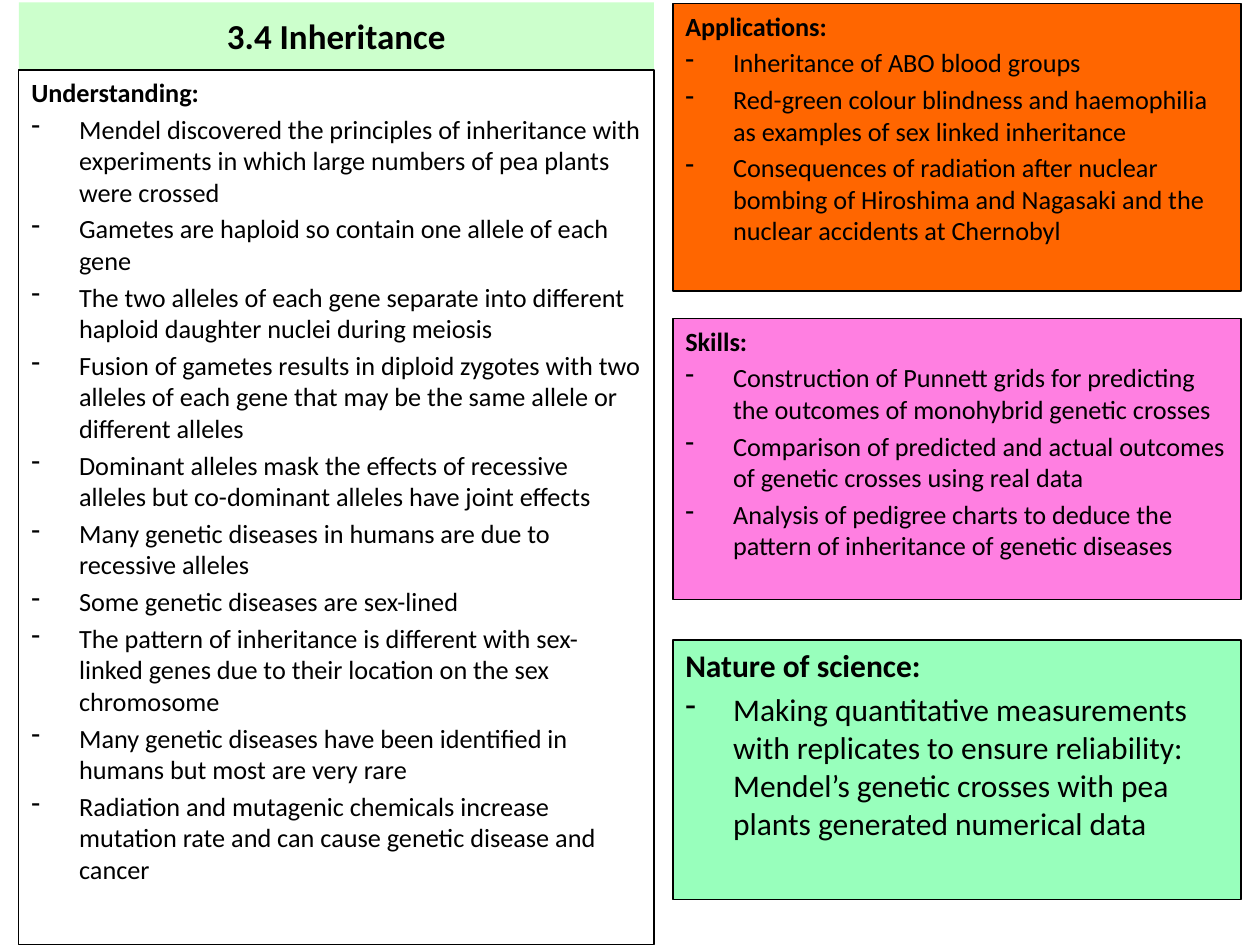
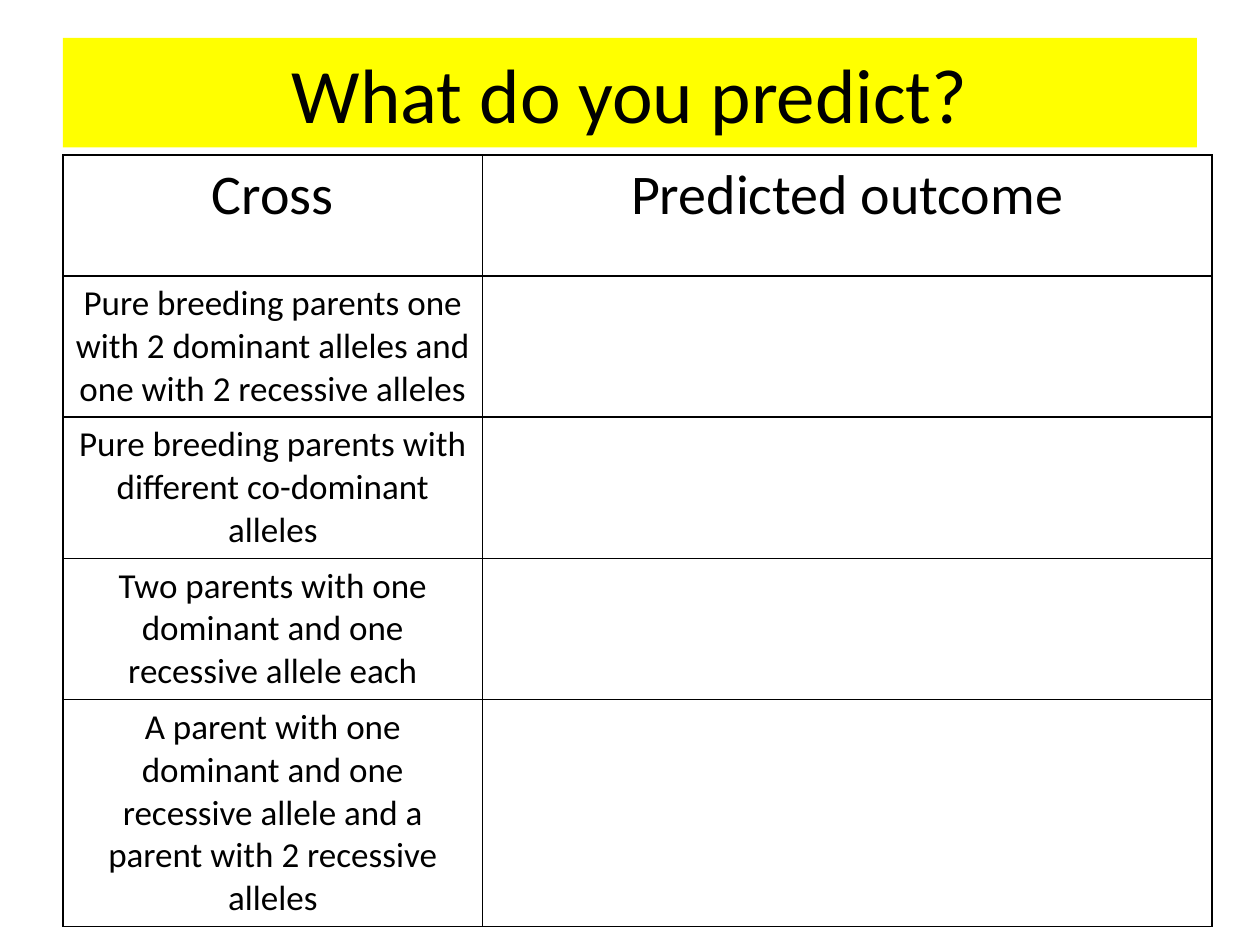
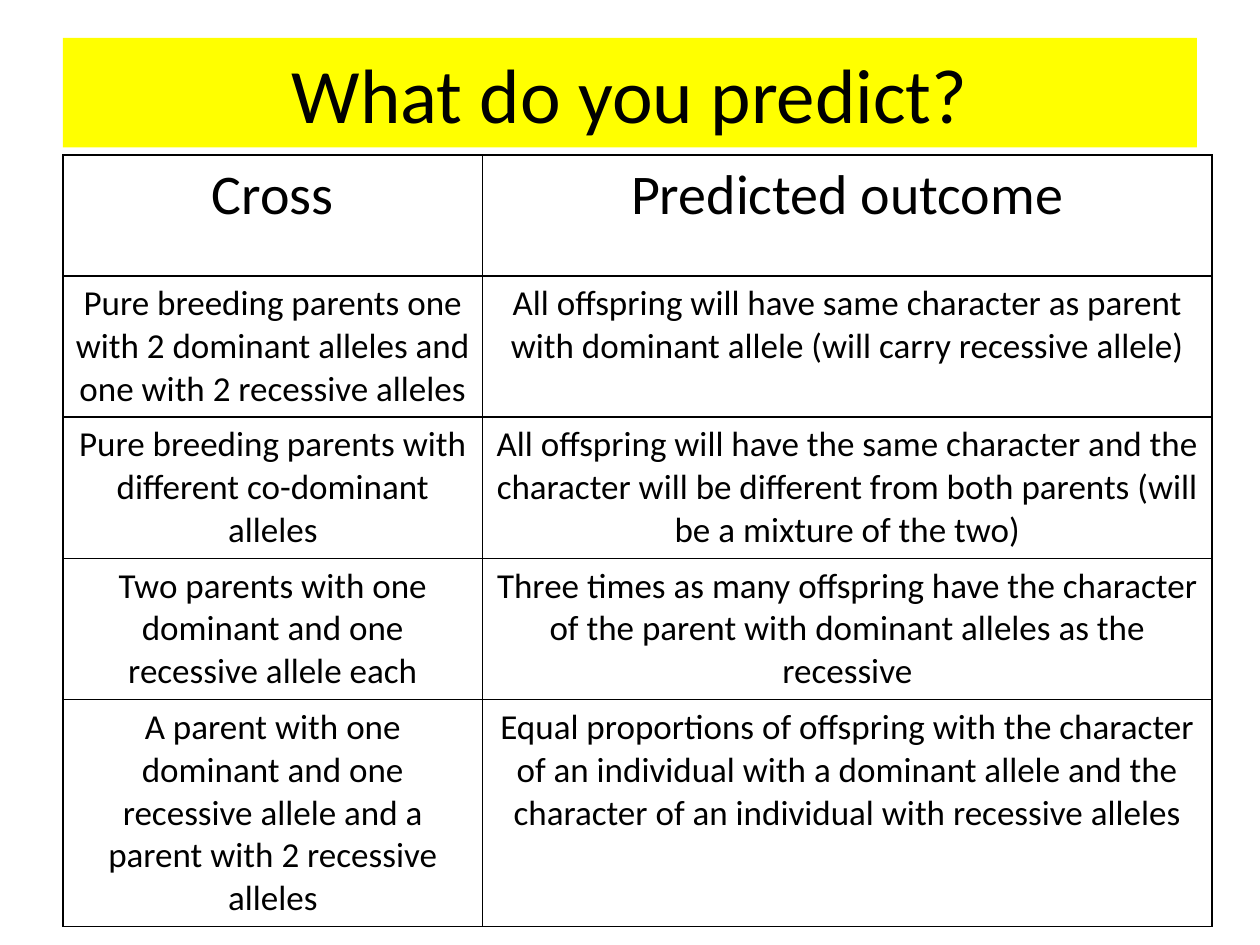
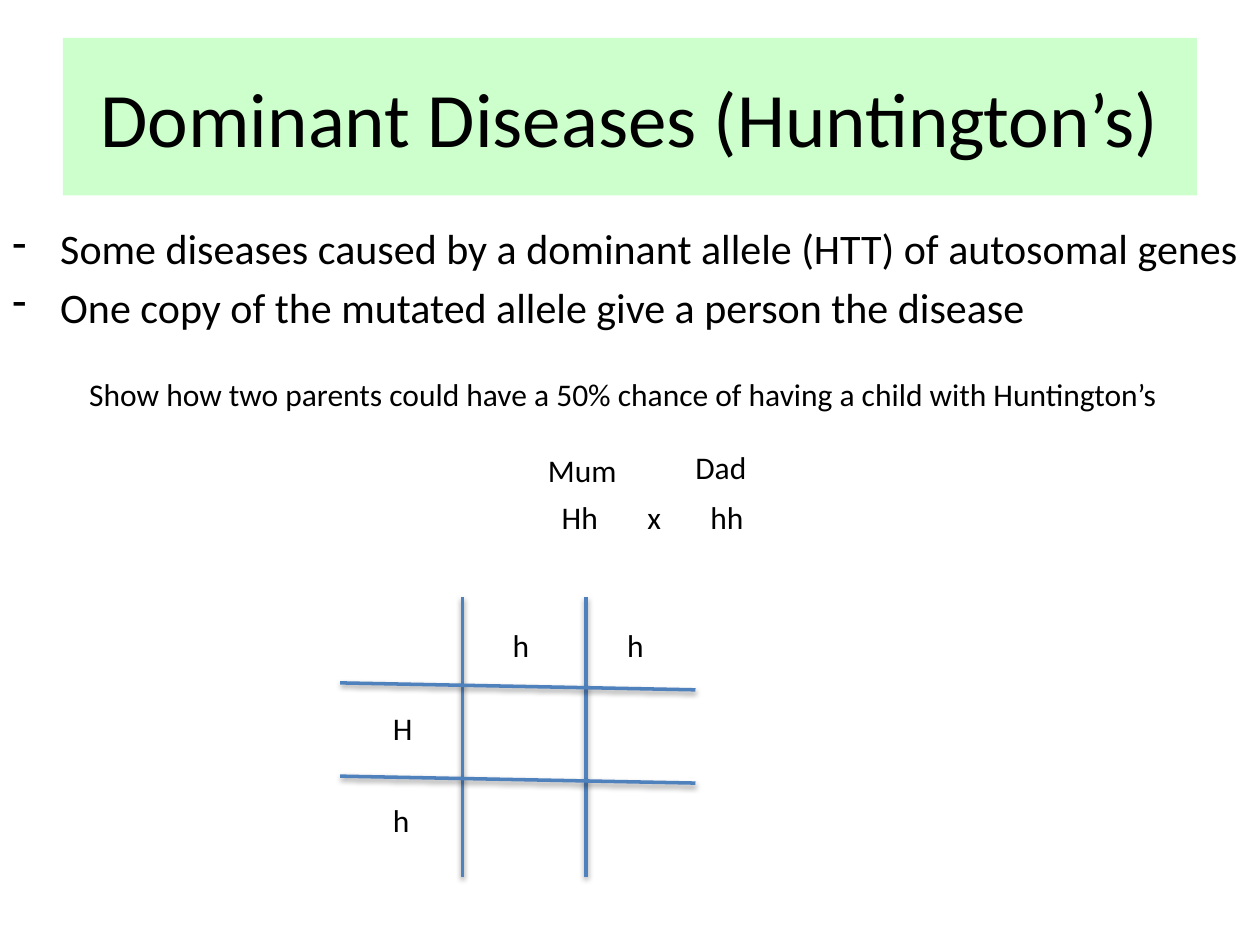
from lxml import etree
from pptx import Presentation
from pptx.dml.color import RGBColor
from pptx.enum.shapes import MSO_CONNECTOR, MSO_SHAPE
from pptx.enum.text import MSO_ANCHOR, PP_ALIGN
from pptx.oxml.ns import qn
from pptx.util import Inches, Pt

RECTANGLE = MSO_SHAPE.RECTANGLE
STRAIGHT = MSO_CONNECTOR.STRAIGHT
LEFT, CENTER = PP_ALIGN.LEFT, PP_ALIGN.CENTER
TOP, MIDDLE = MSO_ANCHOR.TOP, MSO_ANCHOR.MIDDLE

BLACK = RGBColor(0x00, 0x00, 0x00)
PALE_GREEN = RGBColor(0xCC, 0xFF, 0xCC)
YELLOW = RGBColor(0xFF, 0xFF, 0x00)
ORANGE = RGBColor(0xFF, 0x66, 0x00)
PINK = RGBColor(0xFF, 0x7F, 0xE1)
MINT = RGBColor(0x98, 0xFF, 0xBC)
BLUE = RGBColor(0x4F, 0x81, 0xBD)

FONT = "Calibri"
TITLE_SIZE = 44
HANGING_INDENT = Inches(0.38)

presentation = Presentation()
presentation.slide_width = Inches(10)
presentation.slide_height = Inches(7.5)
CELL = presentation.slide_width / 100
blank_layout = presentation.slide_layouts[6]


def write(frame, text, size=18, align=LEFT, bold_first=False, bullets=False,
          spacing=0, tabs=()):
    for index, line in enumerate(text.split("\n")):
        paragraph = frame.paragraphs[0] if index == 0 else frame.add_paragraph()
        heading = bold_first and index == 0
        paragraph.alignment = align
        paragraph.space_before = Pt(size * spacing)
        properties = paragraph._p.get_or_add_pPr()
        if bullets and not heading:
            properties.set("marL", str(HANGING_INDENT))
            properties.set("indent", str(-HANGING_INDENT))
            etree.SubElement(properties, qn("a:buChar"), char="-")
        if tabs:
            tab_list = etree.SubElement(properties, qn("a:tabLst"))
            for tab in tabs:
                etree.SubElement(tab_list, qn("a:tab"), pos=str(int(tab * CELL)), algn="l")
        run = paragraph.add_run()
        run.text = line
        run.font.name = FONT
        run.font.size = Pt(size)
        run.font.bold = heading
        run.font.color.rgb = BLACK


def add_box(slide, grid, text, fill=None, outlined=False, anchor=TOP, wrap=True, **text_format):
    shape = slide.shapes.add_shape(RECTANGLE, *[int(unit * CELL) for unit in grid])
    shape.shadow.inherit = False
    if fill is None:
        shape.fill.background()
    else:
        shape.fill.solid()
        shape.fill.fore_color.rgb = fill
    if outlined:
        shape.line.color.rgb = BLACK
        shape.line.width = Pt(0.75)
    else:
        shape.line.fill.background()
    shape.text_frame.word_wrap = wrap
    shape.text_frame.vertical_anchor = anchor
    write(shape.text_frame, text, **text_format)


UNDERSTANDING = [
    "Understanding:",
    "Mendel discovered the principles of inheritance with experiments in which large numbers of pea plants were crossed",
    "Gametes are haploid so contain one allele of each gene",
    "The two alleles of each gene separate into different haploid daughter nuclei during meiosis",
    "Fusion of gametes results in diploid zygotes with two alleles of each gene that may be the same allele or different alleles",
    "Dominant alleles mask the effects of recessive alleles but co-dominant alleles have joint effects",
    "Many genetic diseases in humans are due to recessive alleles",
    "Some genetic diseases are sex-lined",
    "The pattern of inheritance is different with sex-linked genes due to their location on the sex chromosome",
    "Many genetic diseases have been identified in humans but most are very rare",
    "Radiation and mutagenic chemicals increase mutation rate and can cause genetic disease and cancer",
]
APPLICATIONS = [
    "Applications:",
    "Inheritance of ABO blood groups",
    "Red-green colour blindness and haemophilia as examples of sex linked inheritance",
    "Consequences of radiation after nuclear bombing of Hiroshima and Nagasaki and the nuclear accidents at Chernobyl",
]
SKILLS = [
    "Skills:",
    "Construction of Punnett grids for predicting the outcomes of monohybrid genetic crosses",
    "Comparison of predicted and actual outcomes of genetic crosses using real data",
    "Analysis of pedigree charts to deduce the pattern of inheritance of genetic diseases",
]
NATURE = [
    "Nature of science:",
    "Making quantitative measurements with replicates to ensure reliability: Mendel’s genetic crosses with pea plants generated numerical data",
]

slide = presentation.slides.add_slide(blank_layout)
add_box(slide, (1.5, 0.2, 50.4, 5.3), "3.4 Inheritance", fill=PALE_GREEN,
        anchor=MIDDLE, size=20, align=CENTER, bold_first=True)
panels = [
    ((1.5, 5.55, 50.4, 69.4), UNDERSTANDING, None, 15),
    ((53.4, 0.3, 45.1, 22.8), APPLICATIONS, ORANGE, 15),
    ((53.4, 25.3, 45.1, 22.3), SKILLS, PINK, 15),
    ((53.4, 50.8, 45.1, 20.6), NATURE, MINT, 18),
]
for grid, lines, fill, size in panels:
    add_box(slide, grid, "\n".join(lines), fill=fill, outlined=True, size=size,
            bold_first=True, bullets=True, spacing=0.2)

CROSSES = [
    ("Pure breeding parents one with 2 dominant alleles and one with 2 recessive alleles",
     "All offspring will have same character as parent with dominant allele (will carry recessive allele)"),
    ("Pure breeding parents with different co-dominant alleles",
     "All offspring will have the same character and the character will be different from both parents (will be a mixture of the two)"),
    ("Two parents with one dominant and one recessive allele each",
     "Three times as many offspring have the character of the parent with dominant alleles as the recessive"),
    ("A parent with one dominant and one recessive allele and a parent with 2 recessive alleles",
     "Equal proportions of offspring with the character of an individual with a dominant allele and the character of an individual with recessive alleles"),
]
COLUMN_WIDTHS = (33.3, 57.9)
ROW_HEIGHT = 9.6

for answered in (False, True):
    slide = presentation.slides.add_slide(blank_layout)
    add_box(slide, (5, 3, 90, 8.7), "What do you predict?", fill=YELLOW,
            anchor=MIDDLE, size=TITLE_SIZE, align=CENTER)
    rows = [("Cross", "Predicted outcome")]
    rows += [(cross, outcome if answered else "") for cross, outcome in CROSSES]
    table_grid = (5, 12.3, sum(COLUMN_WIDTHS), ROW_HEIGHT * len(rows))
    table = slide.shapes.add_table(
        len(rows), len(COLUMN_WIDTHS), *[int(unit * CELL) for unit in table_grid]).table
    table.first_row = False
    table.horz_banding = False
    for column, width in zip(table.columns, COLUMN_WIDTHS):
        column.width = int(width * CELL)
    for row_index, row in enumerate(rows):
        for column_index, text in enumerate(row):
            cell = table.cell(row_index, column_index)
            cell.fill.background()
            if text:
                write(cell.text_frame, text, size=20 if row_index else 32, align=CENTER)
            cell_properties = cell._tc.get_or_add_tcPr()
            for position, side in enumerate(("lnL", "lnR", "lnT", "lnB")):
                border = etree.Element(qn("a:" + side), w=str(Pt(1)))
                border_fill = etree.SubElement(border, qn("a:solidFill"))
                etree.SubElement(border_fill, qn("a:srgbClr"), val=str(BLACK))
                cell_properties.insert(position, border)

slide = presentation.slides.add_slide(blank_layout)
add_box(slide, (5, 3, 90, 12.5), "Dominant Diseases (Huntington’s)", fill=PALE_GREEN,
        anchor=MIDDLE, size=TITLE_SIZE, align=CENTER)
add_box(slide, (0, 17.2, 100, 57.8),
        "Some diseases caused by a dominant allele (HTT) of autosomal genes\n"
        "One copy of the mutated allele give a person the disease",
        size=24, bullets=True, spacing=0.2)

LABEL_HEIGHT = 4
parent_labels = [
    (6.1, 29.3, 87.9, "Show how two parents could have a 50% chance of having a child with Huntington’s"),
    (42.5, 35.3, 7.5, "Mum"),
    (54.2, 35.1, 6.1, "Dad"),
]
for left, top, width, text in parent_labels:
    add_box(slide, (left, top, width, LABEL_HEIGHT), text, wrap=False)
add_box(slide, (43.6, 39, 16.8, LABEL_HEIGHT), "Hh\tx\thh", tabs=(6.8, 11.8))

punnett_lines = [(x, 47.4, x, 69.6) for x in (36.7, 46.5)]
punnett_lines += [(27, y, 55.2, y + 0.55) for y in (54.2, 61.6)]
for ends in punnett_lines:
    connector = slide.shapes.add_connector(STRAIGHT, *[int(unit * CELL) for unit in ends])
    connector.line.color.rgb = BLUE
    connector.line.width = Pt(2)
    effects = etree.SubElement(connector._element.spPr, qn("a:effectLst"))
    shadow = etree.SubElement(effects, qn("a:outerShdw"), blurRad=str(Pt(3.1)),
                              dist=str(Pt(1.6)), dir="5400000", rotWithShape="0")
    shadow_color = etree.SubElement(shadow, qn("a:srgbClr"), val=str(BLACK))
    etree.SubElement(shadow_color, qn("a:alpha"), val="38000")

gamete_labels = [
    (30.2, 55.8, 12.1, "H"),
    (30.2, 63.1, 8, "h"),
    (48.8, 49.2, 11.6, "h"),
    (39.7, 49.2, 13.7, "h"),
]
for left, top, width, text in gamete_labels:
    add_box(slide, (left, top, width, LABEL_HEIGHT), text)

presentation.save("out.pptx")
